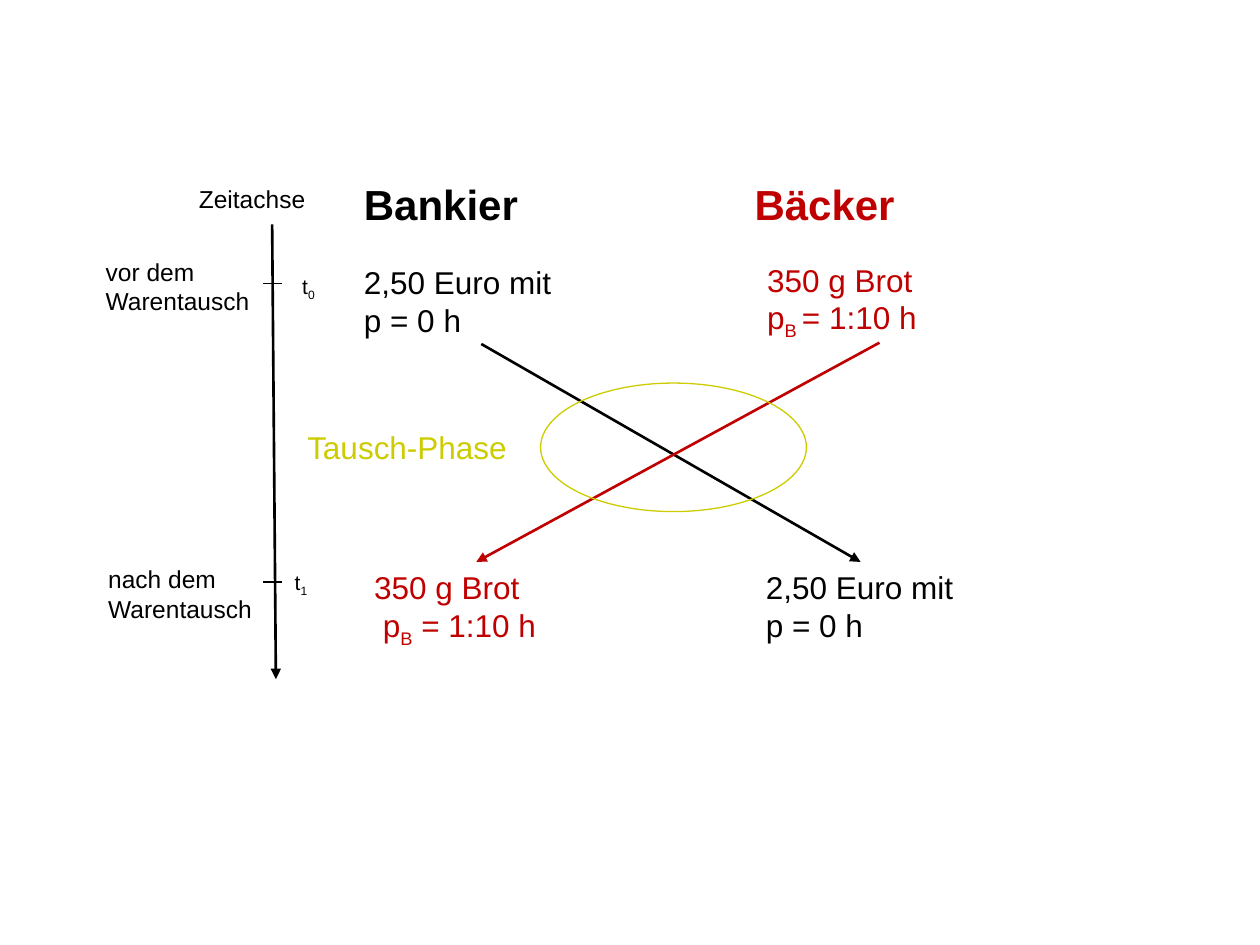
from lxml import etree
from pptx import Presentation
from pptx.dml.color import RGBColor
from pptx.enum import shapes, text
from pptx.oxml import ns
from pptx.util import Inches, Pt

BLACK, RED, OLIVE = "000000", "C00000", "CCCC00"


def color(hex_code):
    """Turn a hex string into a colour."""
    return RGBColor.from_string(hex_code)


def add_line_runs(paragraph, line):
    """Write one line, lowering every second part between bars."""
    for index, part in enumerate(line.split("|")):
        if part:
            run = paragraph.add_run()
            run.text = part
            if index % 2:
                run._r.get_or_add_rPr().set("baseline", "-25000")


def add_label(slide, box, content, size, hex_code=BLACK, bold=False, wrap=False):
    """Add a text box whose lines are parted by line breaks."""
    shape = slide.shapes.add_textbox(*map(Inches, box))
    frame = shape.text_frame
    frame.word_wrap = wrap
    frame.auto_size = text.MSO_AUTO_SIZE.SHAPE_TO_FIT_TEXT
    paragraph = frame.paragraphs[0]
    for index, line in enumerate(content.split("\n")):
        if index:
            paragraph.add_line_break()
        add_line_runs(paragraph, line)
    font = paragraph.font
    font.name, font.size, font.bold = "Arial", Pt(size), bold
    font.color.rgb = color(hex_code)


def add_line(slide, start, end, hex_code=BLACK, width=1.5, arrow=True):
    """Add a straight line, with an arrowhead at its end if wanted."""
    connector = slide.shapes.add_connector(
        shapes.MSO_CONNECTOR.STRAIGHT, *map(Inches, (*start, *end)))
    connector.line.color.rgb = color(hex_code)
    connector.line.width = Pt(width)
    if arrow:
        line = connector.line._get_or_add_ln()
        etree.SubElement(line, ns.qn("a:tailEnd"), type="triangle")
    etree.SubElement(connector._element.spPr, ns.qn("a:effectLst"))


def add_ellipse(slide, box, hex_code):
    """Add an unfilled ellipse."""
    shape = slide.shapes.add_shape(shapes.MSO_SHAPE.OVAL, *map(Inches, box))
    shape.shadow.inherit = False
    shape.fill.background()
    shape.line.color.rgb = color(hex_code)
    shape.line.width = Pt(0.75)


def add_time_axis(slide):
    """Add the time axis with its ticks and labels."""
    add_label(slide, (1.48, 1.41, 1.05, 0.34), "Zeitachse", 14)
    add_line(slide, (2.16, 1.78), (2.19, 5.39))
    moments = [
        (2.25, "t|0|", (2.3, 2.12), "vor dem", (0.74, 1.99)),
        (4.62, "t|1|", (2.24, 4.47), "nach dem", (0.76, 4.43)),
    ]
    for y, moment, moment_at, phase, phase_at in moments:
        add_line(slide, (2.09, y), (2.24, y), width=0.75, arrow=False)
        add_label(slide, (*moment_at, 0.31, 0.3), moment, 12)
        add_label(slide, (*phase_at, 1.35, 0.57), f"{phase}\nWarentausch", 14)


def add_exchange(slide):
    """Add both traders, their goods and the crossing exchange."""
    money = "2,50 Euro mit\np = 0 h"
    add_label(slide, (2.79, 1.37, 1.44, 0.5), "Bankier", 24, bold=True)
    add_label(slide, (5.89, 1.37, 1.33, 0.5), "Bäcker", 24, RED, bold=True)
    add_label(slide, (2.79, 2.04, 2.36, 0.7), money, 18, wrap=True)
    add_label(slide, (5.98, 4.46, 1.71, 0.71), money, 18)
    add_label(slide, (5.99, 2.02, 1.98, 0.7),
              "350 g Brot\np|B |= 1:10 h", 18, RED, wrap=True)
    add_label(slide, (2.87, 4.46, 1.81, 0.7),
              "350 g Brot\n p|B| = 1:10 h", 18, RED, wrap=True)
    add_line(slide, (3.82, 2.73), (6.83, 4.46))
    add_line(slide, (6.98, 2.72), (3.78, 4.46), RED)
    add_ellipse(slide, (4.29, 3.04, 2.11, 1.02), OLIVE)
    add_label(slide, (2.34, 3.35, 1.81, 0.4), "Tausch-Phase", 18, OLIVE)


def main():
    """Build and save the slide."""
    presentation = Presentation()
    presentation.slide_width, presentation.slide_height = Inches(10), Inches(7.5)
    slide = presentation.slides.add_slide(presentation.slide_layouts[6])
    add_time_axis(slide)
    add_exchange(slide)
    presentation.save("out.pptx")


if __name__ == "__main__":
    main()
